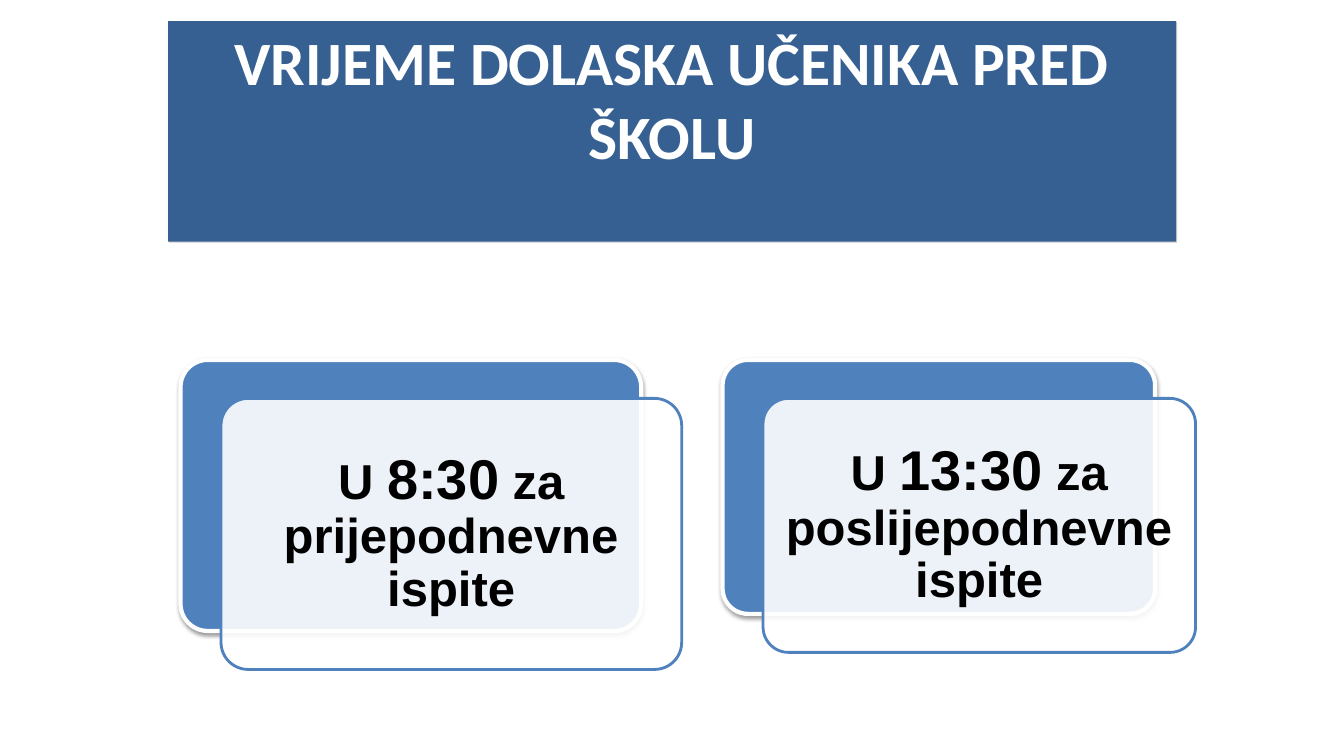
from lxml import etree
from pptx import Presentation
from pptx.dml.color import RGBColor
from pptx.enum.shapes import MSO_SHAPE
from pptx.enum.text import MSO_ANCHOR, MSO_AUTO_SIZE, PP_ALIGN
from pptx.oxml.ns import qn
from pptx.util import Cm, Pt

ROUNDED = MSO_SHAPE.ROUNDED_RECTANGLE
TOP, MIDDLE = MSO_ANCHOR.TOP, MSO_ANCHOR.MIDDLE
CENTER = PP_ALIGN.CENTER
NO_FIT = MSO_AUTO_SIZE.NONE

COLORS = {
    "banner": "376092",
    "card": "4F81BD",
    "white": "FFFFFF",
    "black": "000000",
}
TITLE = "VRIJEME DOLASKA UČENIKA PRED ŠKOLU"
CARD_TOP = 9.07
PANEL_SHIFT = (1.02, 0.97)
CARDS = [
    (4.55, 11.61, 6.83, "8:30", "prijepodnevne"),
    (18.21, 10.9, 6.4, "13:30", "poslijepodnevne"),
]


def color(name):
    """Return the named colour."""
    return RGBColor.from_string(COLORS[name])


def set_format(target, values):
    """Set each format value as an attribute of the target."""
    for name, value in values.items():
        setattr(target, name, value)


def place(shape, left, top, width, height):
    """Position a shape with lengths in centimetres."""
    set_format(shape, {"left": Cm(left), "top": Cm(top),
                       "width": Cm(width), "height": Cm(height)})


def fill_shape(shape, name):
    """Give a shape a solid fill."""
    shape.fill.solid()
    shape.fill.fore_color.rgb = color(name)


def add_shadow(shape, opacity, blur, distance, angle):
    """Give a shape an outer shadow."""
    shape.shadow.inherit = False
    effects = shape._element.spPr.find(qn("a:effectLst"))
    shadow = etree.SubElement(effects, qn("a:outerShdw"), {
        "blurRad": str(Pt(blur)), "dist": str(Pt(distance)),
        "dir": str(angle * 60000), "algn": "tl", "rotWithShape": "0"})
    tint = etree.SubElement(shadow, qn("a:srgbClr"), val=COLORS["black"])
    etree.SubElement(tint, qn("a:alpha"), val=str(opacity * 1000))


def set_opacity(shape, percent):
    """Make the solid fill of a shape partly transparent."""
    tint = shape._element.spPr.find(qn("a:solidFill")).find(qn("a:srgbClr"))
    etree.SubElement(tint, qn("a:alpha"), val=str(percent * 1000))


def set_frame(shape, anchor, margin_x, margin_y):
    """Set wrapping, anchor and margins of the text in a shape."""
    set_format(shape.text_frame, {
        "word_wrap": True, "auto_size": NO_FIT, "vertical_anchor": anchor,
        "margin_left": Cm(margin_x), "margin_right": Cm(margin_x),
        "margin_top": Cm(margin_y), "margin_bottom": Cm(margin_y)})


def add_span(para, text, size, font, name):
    """Add a bold run to a paragraph."""
    span = para.add_run()
    span.text = text
    set_format(span.font, {"size": Pt(size), "name": font, "bold": True})
    span.font.color.rgb = color(name)


def add_title(page):
    """Format the title placeholder as a banner."""
    banner = page.shapes.title
    place(banner, 4.24, 0.53, 25.4, 5.56)
    fill_shape(banner, "banner")
    add_shadow(banner, 20, 0, 1, 45)
    set_frame(banner, TOP, 0.25, 0.08)
    para = banner.text_frame.paragraphs[0]
    para.alignment = CENTER
    add_span(para, TITLE, 44, "Calibri", "white")


def add_rounded(page, box, fill, line, weight):
    """Add a rounded rectangle with a fill and an outline."""
    shape = page.shapes.add_shape(ROUNDED, *map(Cm, box))
    shape.adjustments[0] = 0.1
    shape.shadow.inherit = False
    fill_shape(shape, fill)
    shape.line.color.rgb = color(line)
    shape.line.width = Pt(weight)
    return shape


def add_card(page, left, width, height, time, session):
    """Add a blue card and the shifted panel that holds its text."""
    card = add_rounded(page, (left, CARD_TOP, width, height),
                       "card", "white", 3)
    add_shadow(card, 38, 3.1, 1.6, 90)
    shift_x, shift_y = PANEL_SHIFT
    panel = add_rounded(
        page, (left + shift_x, CARD_TOP + shift_y, width, height),
        "white", "card", 2)
    set_opacity(panel, 90)
    set_frame(panel, MIDDLE, 0.37, 0.37)
    para = panel.text_frame.paragraphs[0]
    set_format(para, {"alignment": CENTER, "line_spacing": 0.9})
    for text, size in (("U ", 35), (time, 40), (f" za {session} ispite", 35)):
        add_span(para, text, size, "Arial", "black")


def main():
    """Build the slide and save the deck."""
    deck = Presentation()
    set_format(deck, {"slide_width": Cm(33.87), "slide_height": Cm(19.05)})
    page = deck.slides.add_slide(deck.slide_layouts.get_by_name("Title Only"))
    add_title(page)
    for card in CARDS:
        add_card(page, *card)
    deck.save("out.pptx")


if __name__ == "__main__":
    main()
